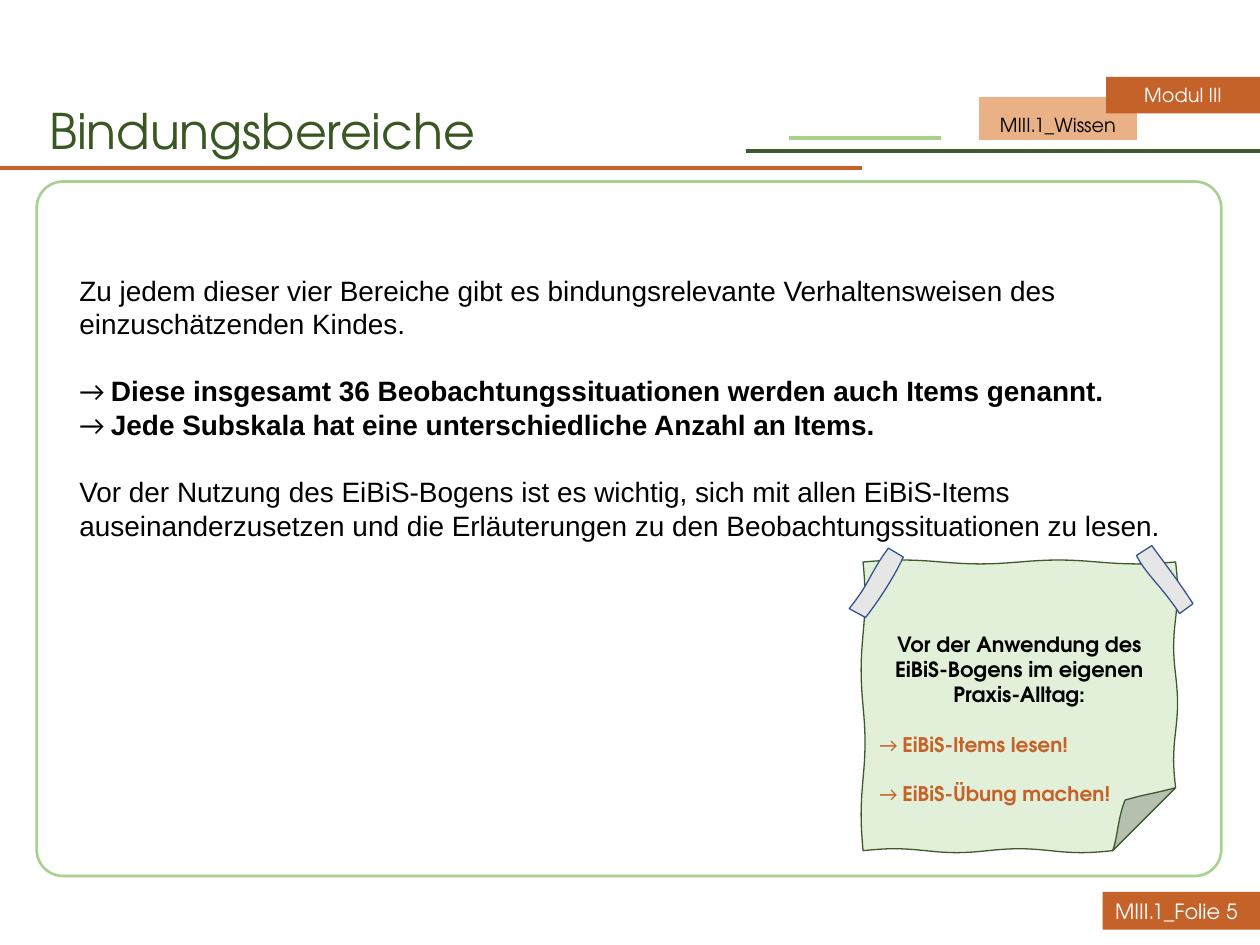
from dataclasses import dataclass
from math import pi, sin

from lxml.etree import SubElement
from pptx import Presentation
from pptx.dml.color import RGBColor
from pptx.enum.shapes import MSO_CONNECTOR, MSO_SHAPE
from pptx.enum.text import MSO_ANCHOR, PP_ALIGN
from pptx.oxml.ns import qn
from pptx.util import Cm, Pt


@dataclass(frozen=True)
class Theme:
    heading: str = "TeX Gyre Adventor"
    body: str = "Arial"
    symbol: str = "Calibri"
    black: str = "000000"
    white: str = "FFFFFF"
    rust: str = "C46229"
    peach: str = "EAB086"
    forest: str = "3E5A2D"
    title: str = "385723"
    leaf: str = "A9D18E"
    paper: str = "E2F0D9"
    fold: str = "B5C0AE"
    tape: str = "E7E6E6"
    tape_edge: str = "325491"
    title_size: float = 28
    body_size: float = 16
    note_size: float = 12
    arrow_size: float = 11.5
    tag_size: float = 11


T = Theme()


def rgb(value):
    return RGBColor.from_string(value)


def add_run(p, text, font, size, color, bold=False):
    r = p.add_run()
    r.text = text
    r.font.name = font
    r.font.size = Pt(size)
    r.font.bold = bold
    r.font.color.rgb = rgb(color)


def style(s, fill=None, line=None, width=0.75):
    s.shadow.inherit = False
    if fill:
        s.fill.solid()
        s.fill.fore_color.rgb = rgb(fill)
    else:
        s.fill.background()
    if line:
        s.line.color.rgb = rgb(line)
        s.line.width = Pt(width)
    else:
        s.line.fill.background()


def add_rule(slide, x1, x2, y, color):
    s = slide.shapes.add_connector(MSO_CONNECTOR.STRAIGHT, Cm(x1), Cm(y), Cm(x2), Cm(y))
    s.line.color.rgb = rgb(color)
    s.line.width = Pt(2.25)
    SubElement(s._element.spPr, qn("a:effectLst"))


def add_tag(slide, x, y, w, h, text, fill, color, size=T.tag_size,
            align=PP_ALIGN.CENTER, spacing=1.0):
    s = slide.shapes.add_shape(MSO_SHAPE.RECTANGLE, Cm(x), Cm(y), Cm(w), Cm(h))
    style(s, fill)
    tf = s.text_frame
    tf.vertical_anchor = MSO_ANCHOR.MIDDLE
    p = tf.paragraphs[0]
    p.alignment = align
    p.line_spacing = spacing
    add_run(p, text, T.heading, size, color)


def add_textbox(slide, x, y, w, h):
    tf = slide.shapes.add_textbox(Cm(x), Cm(y), Cm(w), Cm(h)).text_frame
    tf.word_wrap = True
    return tf


def add_outline(slide, x, y, points, fill, line):
    pts = [(Cm(x + px), Cm(y + py)) for px, py in points]
    fb = slide.shapes.build_freeform(*pts[0])
    fb.add_line_segments(pts[1:], close=True)
    s = fb.convert_to_shape()
    style(s, fill, line)
    return s


def curve(a, b, c, d, steps=10):
    return [tuple((1 - t) ** 3 * i + 3 * t * (1 - t) ** 2 * j + 3 * t * t * (1 - t) * k + t ** 3 * l
                  for i, j, k, l in zip(a, b, c, d))
            for t in (n / steps for n in range(steps + 1))]


def wavy_edge(start, end, waves=2, height=0.04, steps=32):
    dx, dy = end[0] - start[0], end[1] - start[1]
    length = (dx * dx + dy * dy) ** 0.5
    points = []
    for n in range(steps):
        t = n / steps
        shift = height * sin(2 * pi * waves * t) / length
        points.append((start[0] + dx * t + dy * shift, start[1] + dy * t - dx * shift))
    return points


def add_header(slide, x, y, w):
    add_rule(slide, x, x + 17.37, y + 3.38, T.rust)
    add_rule(slide, x + 15.04, x + w, y + 3.05, T.forest)
    add_rule(slide, x + 15.9, x + 18.97, y + 2.79, T.leaf)
    add_tag(slide, x + 19.74, y + 1.96, 3.18, 0.86, "MIII.1_Wissen", T.peach, T.black, spacing=1.5)
    add_tag(slide, x + w - 3.1, y + 1.55, 3.1, 0.74, "Modul III", T.rust, T.white)
    p = add_textbox(slide, x + 0.74, y + 2.03, 21.89, 3.68).paragraphs[0]
    p.line_spacing = 0.9
    add_run(p, "Bindungsbereiche", T.heading, T.title_size, T.title)


def add_body(slide, x, y, w, h):
    s = slide.shapes.add_shape(MSO_SHAPE.ROUNDED_RECTANGLE, Cm(x), Cm(y), Cm(w), Cm(h))
    s.adjustments[0] = 0.038
    style(s, line=T.leaf, width=1.5)
    tf = add_textbox(slide, x + 0.61, y + 1.72, w - 1.15, 9.27)
    lines = [
        ("Zu jedem dieser vier Bereiche gibt es bindungsrelevante Verhaltensweisen des "
         "einzuschätzenden Kindes.", False, 0),
        ("Diese insgesamt 36 Beobachtungssituationen werden auch Items genannt.", True, 19.2),
        ("Jede Subskala hat eine unterschiedliche Anzahl an Items.", True, 0),
        ("Vor der Nutzung des EiBiS-Bogens ist es wichtig, sich mit allen EiBiS-Items "
         "auseinanderzusetzen und die Erläuterungen zu den Beobachtungssituationen zu lesen.",
         False, 19.2),
    ]
    for i, (text, key_point, gap) in enumerate(lines):
        p = tf.add_paragraph() if i else tf.paragraphs[0]
        p.line_spacing = Pt(19.2)
        if gap:
            p.space_before = Pt(gap)
        if key_point:
            add_run(p, "→ ", T.symbol, T.body_size, T.black)
        add_run(p, text, T.body, T.body_size, T.black, key_point)


def add_note(slide, x, y, w, h):
    cut = 1.27
    corners = [(0, 0), (w, 0), (w, h - cut), (w - cut, h), (0, h)]
    edges = list(zip(corners, corners[1:] + corners[:1]))
    points = [pt for i, (a, b) in enumerate(edges)
              for pt in wavy_edge(a, b, height=0 if i == 2 else 0.04)]
    s = add_outline(slide, x, y, points, T.paper, T.forest)

    tf = s.text_frame
    tf.word_wrap = True
    tf.vertical_anchor = MSO_ANCHOR.MIDDLE
    tf.margin_top = Cm(0.61)
    p = tf.paragraphs[0]
    p.alignment = PP_ALIGN.CENTER
    add_run(p, "Vor der Anwendung des EiBiS-Bogens im eigenen Praxis-Alltag:",
            T.heading, T.note_size, T.black, True)
    for text in ("EiBiS-Items lesen!", "EiBiS-Übung machen!"):
        p = tf.add_paragraph()
        p.alignment = PP_ALIGN.LEFT
        p.space_before = Pt(14.4)
        p._p.get_or_add_pPr().set("marL", str(Cm(0.12)))
        add_run(p, "→ ", T.symbol, T.arrow_size, T.rust)
        add_run(p, text, T.heading, T.arrow_size, T.rust, True)

    tip = (w - 1.02, h - 1.02)
    fold = (curve(corners[3], (w - 1.17, h - 0.25), (w - 1.17, h - 0.64), tip)
            + curve(tip, (w - 0.61, h - 1.14), (w - 0.48, h - 1.14), corners[2]))
    add_outline(slide, x, y, fold, T.fold, T.forest)

    left_tape = (curve((0.81, -0.1), (0.64, 0.28), (0.33, 0.76), (0.05, 1.12))
                 + curve((-0.28, 0.94), (0.15, 0.41), (0.13, 0.23), (0.51, -0.28)))
    right_tape = (curve((w - 0.48, -0.33), (w - 0.28, -0.05), (w, 0.3), (w + 0.35, 0.84))
                  + curve((w + 0.08, 1.04), (w - 0.25, 0.53), (w - 0.61, 0.23), (w - 0.79, -0.13)))
    for tape in (left_tape, right_tape):
        add_outline(slide, x, y, tape, T.tape, T.tape_edge)


def add_footer(slide, x, y, w, h):
    add_tag(slide, x, y, w, h, "MIII.1_Folie 5", T.rust, T.white, T.note_size, PP_ALIGN.LEFT)


def main():
    prs = Presentation()
    prs.slide_width, prs.slide_height = Cm(25.4), Cm(19.05)
    slide = prs.slides.add_slide(prs.slide_layouts[6])
    add_header(slide, 0, 0, 25.4)
    add_body(slide, 0.74, 3.66, 23.88, 14)
    add_note(slide, 17.4, 11.33, 6.3, 5.82)
    add_footer(slide, 22.23, 17.98, 3.17, 0.76)
    prs.save("out.pptx")


if __name__ == "__main__":
    main()
